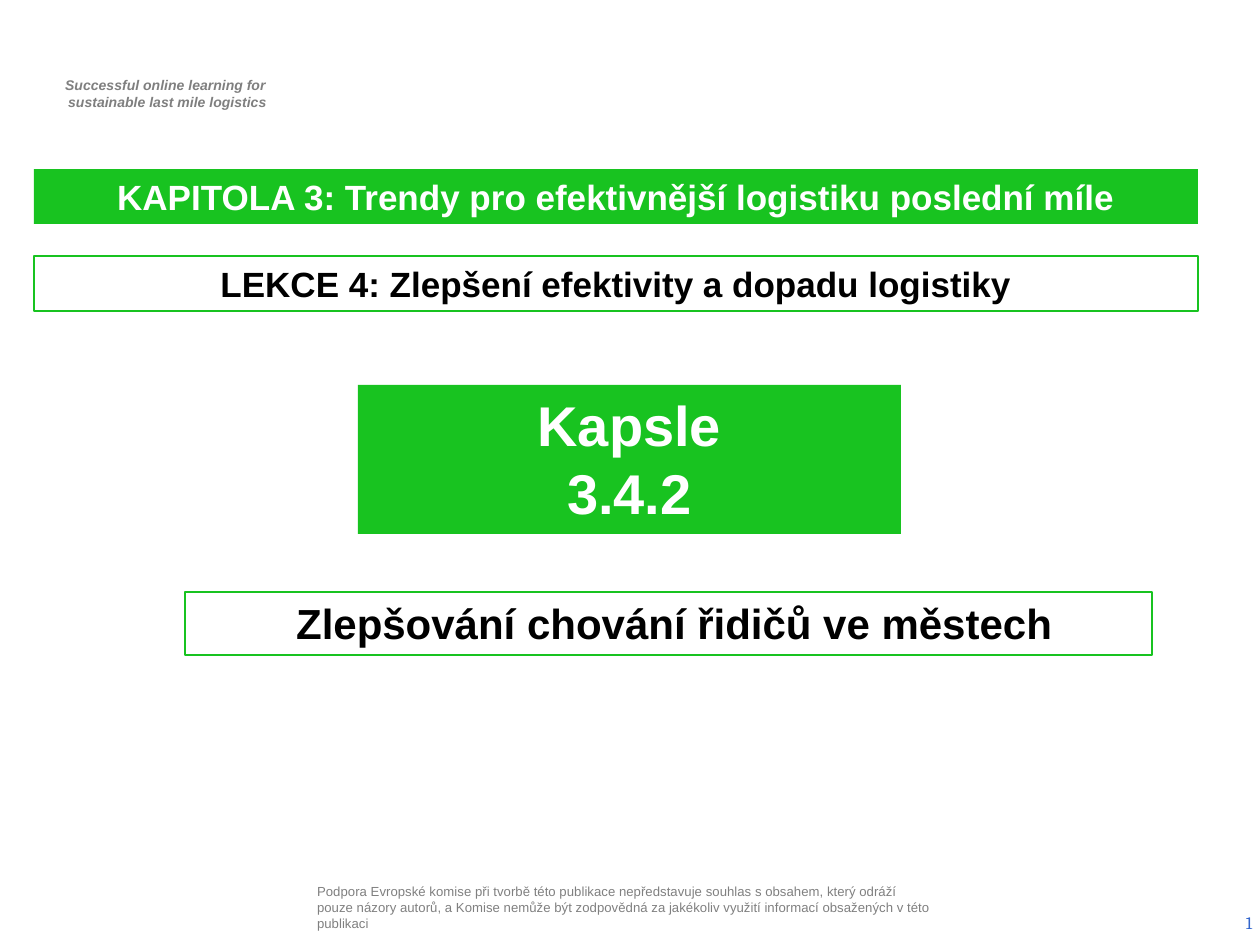
"""Build the title slide of capsule 3.4.2 on driver behaviour in cities."""
import pptx
import pptx.dml.color
import pptx.enum.shapes
import pptx.enum.text
import pptx.util

PX = 914400 / 126
ALIGN = pptx.enum.text.PP_ALIGN
ANCHOR = pptx.enum.text.MSO_ANCHOR
THEME = {
    "font": "Arial", "number_font": "Cambria",
    "green": "18C320", "white": "FFFFFF", "black": "000000",
    "motto_grey": "7F7F7F", "notice_grey": "808080", "blue": "3366CC",
    "capsule": 32, "topic": 24, "heading": 20, "number": 10, "motto": 8, "notice": 7.5,
}


def emu(pixels):
    return pptx.util.Emu(round(pixels * PX))


def write_text(shape, text, size, color, align=ALIGN.CENTER, anchor=ANCHOR.TOP,
               font="font", bold=False, italic=False, insets=(13, 6)):
    frame = shape.text_frame
    frame.word_wrap = True
    frame.vertical_anchor = anchor
    frame.margin_left = frame.margin_right = emu(insets[0])
    frame.margin_top = frame.margin_bottom = emu(insets[1])
    frame.text = text
    for paragraph in frame.paragraphs:
        paragraph.alignment = align
        for run in paragraph.runs:
            run.font.name = THEME[font]
            run.font.size = pptx.util.Pt(THEME[size])
            run.font.bold = bold
            run.font.italic = italic
            run.font.color.rgb = pptx.dml.color.RGBColor.from_string(THEME[color])


presentation = pptx.Presentation()
presentation.slide_width = emu(1260)
presentation.slide_height = emu(945)
slide = presentation.slides.add_slide(presentation.slide_layouts[6])

motto = slide.shapes.add_textbox(emu(37), emu(71), emu(256), emu(47))
write_text(motto, "Successful online learning for \nsustainable last mile logistics",
           "motto", "motto_grey", bold=True, italic=True)
for paragraph in motto.text_frame.paragraphs:
    paragraph._p.get_or_add_pPr().set("marL", str(emu(5)))

notice = slide.shapes.add_textbox(emu(312), emu(876), emu(625), emu(63))
write_text(notice, "Podpora Evropské komise při tvorbě této publikace nepředstavuje souhlas s obsahem, "
           "který odráží pouze názory autorů, a Komise nemůže být zodpovědná za jakékoliv využití "
           "informací obsažených v této publikaci",
           "notice", "notice_grey", ALIGN.LEFT, ANCHOR.MIDDLE, insets=(5, 5))

page_number = slide.shapes.add_textbox(emu(971), emu(898), emu(294), emu(50))
write_text(page_number, "1", "number", "blue", ALIGN.RIGHT, ANCHOR.MIDDLE, "number_font")

green = pptx.dml.color.RGBColor.from_string(THEME["green"])
banners = [
    ("Kapsle\n3.4.2", "capsule", (358, 385, 543, 149), None),
    (" Zlepšování chování řidičů ve městech", "topic", (185, 592, 967, 63), 1.5),
    ("KAPITOLA 3: Trendy pro efektivnější logistiku poslední míle", "heading", (34, 169, 1164, 55), None),
    ("LEKCE 4: Zlepšení efektivity a dopadu logistiky", "heading", (34, 256, 1164, 55), 0.75),
]
for text, size, bounds, outline in banners:
    banner = slide.shapes.add_shape(pptx.enum.shapes.MSO_SHAPE.RECTANGLE, *map(emu, bounds))
    banner.shadow.inherit = False
    if outline:
        banner.fill.background()
        banner.line.color.rgb = green
        banner.line.width = pptx.util.Pt(outline)
    else:
        banner.fill.solid()
        banner.fill.fore_color.rgb = green
        banner.line.fill.background()
    write_text(banner, text, size, "black" if outline else "white", bold=True)

presentation.save("out.pptx")
